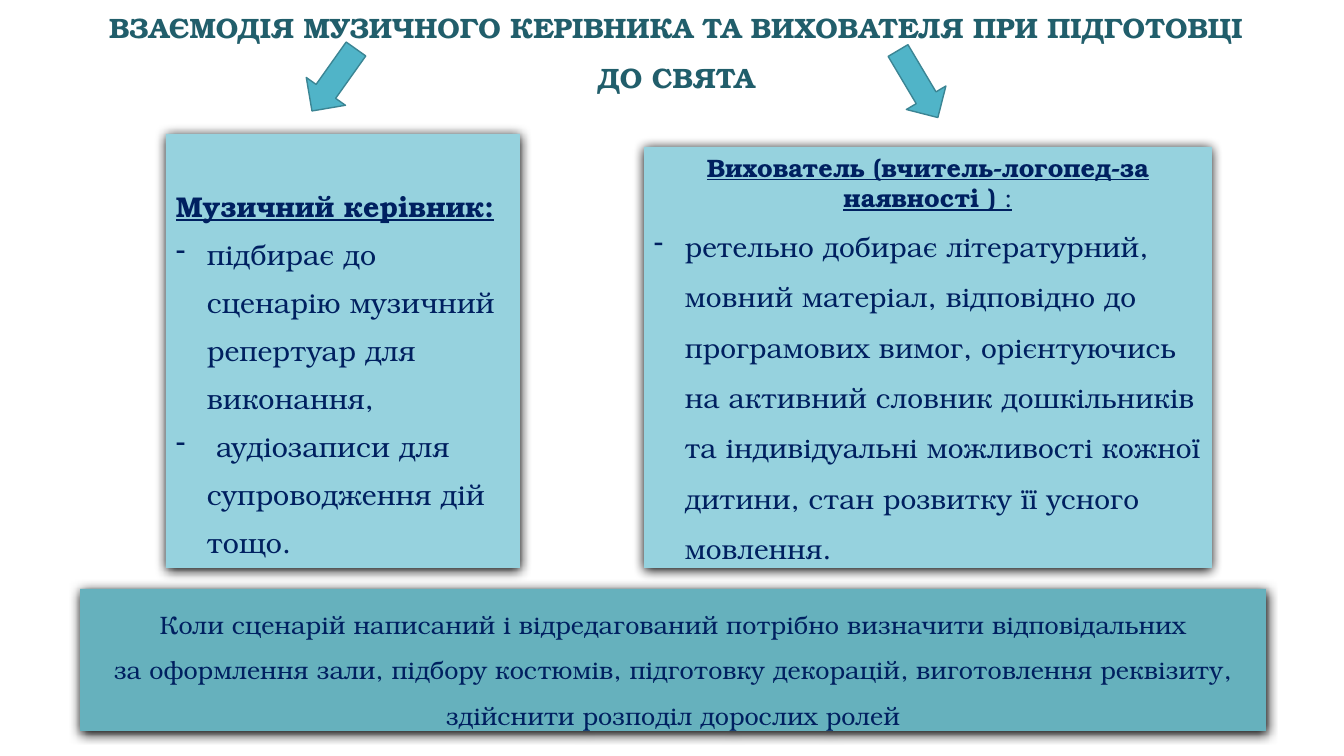
from lxml.etree import SubElement
from pptx import Presentation
from pptx.dml.color import RGBColor
from pptx.enum.shapes import MSO_SHAPE as Shape
from pptx.enum.text import MSO_ANCHOR as Anchor, PP_ALIGN as Align
from pptx.oxml.ns import qn
from pptx.util import Pt

TITLE_TEAL = RGBColor(0x21, 0x5E, 0x6B)
NAVY = RGBColor(0x00, 0x20, 0x60)
PALE_TEAL = RGBColor(0x96, 0xD2, 0xDE)
DEEP_TEAL = RGBColor(0x66, 0xB1, 0xBD)
ARROW_TEAL = RGBColor(0x50, 0xB4, 0xC8)
ARROW_EDGE = RGBColor(0x3B, 0x85, 0x94)
FONT = "TeX Gyre Bonum"
PX = 914400 / 100.8
INDENT = 31

# Text styles
HEADING = {"bold": True, "underline": True}
UNDERLINED = {"underline": True}
PLAIN = {}

# Content: a paragraph is (runs, size, line spacing, alignment, bulleted)
TITLE = [([("ВЗАЄМОДІЯ МУЗИЧНОГО КЕРІВНИКА ТА ВИХОВАТЕЛЯ ПРИ ПІДГОТОВЦІ ДО СВЯТА",
            {"bold": True, "color": TITLE_TEAL})], 20, 1.5, Align.CENTER, False)]
MUSIC_LEADER = [
    ([("Музичний керівник:", HEADING)], 20.4, 1.4, Align.LEFT, False),
    ([("підбирає до сценарію музичний репертуар для виконання,", PLAIN)],
     20.4, 1.4, Align.LEFT, True),
    ([(" аудіозаписи для супроводження дій тощо.", PLAIN)],
     20.4, 1.4, Align.LEFT, True),
]
EDUCATOR = [
    ([("Вихователь (вчитель-логопед-за наявності ) ", HEADING), (":", UNDERLINED)],
     18, 1.0, Align.CENTER, False),
    ([("ретельно добирає літературний, мовний матеріал, відповідно до програмових "
       "вимог, орієнтуючись на активний словник дошкільників та індивідуальні "
       "можливості кожної дитини, стан розвитку її усного мовлення.", PLAIN)],
     20, 1.5, Align.LEFT, True),
]
SUMMARY = [
    ([(line, PLAIN)], 18, 1.5, Align.CENTER, False) for line in (
        "Коли сценарій написаний і відредагований потрібно визначити відповідальних",
        "за оформлення зали, підбору костюмів, підготовку декорацій, виготовлення "
        "реквізиту, здійснити розподіл дорослих ролей")
]

# Layout in px: left, top, width, height
TITLE_AREA = (87, 10, 1178, 68)
PANELS = [  # area, fill, top margin, paragraphs
    ((166, 134, 354, 434), PALE_TEAL, 41, MUSIC_LEADER),
    ((644, 147, 568, 421), PALE_TEAL, 5, EDUCATOR),
    ((80, 589, 1186, 142), DEEP_TEAL, 5, SUMMARY),
]
ARROWS = [((310, 42, 48, 76), 35.4), ((895, 45, 46, 78), 329.3)]


def emu(*lengths):
    return [round(length * PX) for length in lengths]


def write(frame, paragraphs):
    frame.word_wrap = True
    for number, (runs, size, spacing, alignment, bulleted) in enumerate(paragraphs):
        paragraph = frame.add_paragraph() if number else frame.paragraphs[0]
        paragraph.alignment = alignment
        paragraph.line_spacing = spacing
        if bulleted:
            properties = paragraph._p.get_or_add_pPr()
            indent, = emu(INDENT)
            properties.set("marL", str(indent))
            properties.set("indent", str(-indent))
            SubElement(properties, qn("a:buChar"), char="-")
        for text, style in runs:
            run = paragraph.add_run()
            run.text = text
            look = {"name": FONT, "size": Pt(size), "bold": False,
                    "underline": False, "color": NAVY} | style
            run.font.color.rgb = look.pop("color")
            for attribute, value in look.items():
                setattr(run.font, attribute, value)


def add_filled(slide, kind, area, fill):
    shape = slide.shapes.add_shape(kind, *emu(*area))
    shape.shadow.inherit = False
    shape.fill.solid()
    shape.fill.fore_color.rgb = fill
    return shape


def cast_shadow(shape):
    effects = shape._element.spPr.find(qn("a:effectLst"))
    shadow = SubElement(effects, qn("a:outerShdw"), blurRad=str(Pt(8.5)),
                        dist=str(Pt(1)), dir="5400000", rotWithShape="0")
    SubElement(shadow, qn("a:srgbClr"), val="000000")


def main():
    deck = Presentation()
    deck.slide_width, deck.slide_height = emu(1344, 756)
    slide = deck.slides.add_slide(deck.slide_layouts[6])

    # Title
    title = slide.shapes.add_textbox(*emu(*TITLE_AREA)).text_frame
    title.vertical_anchor = Anchor.MIDDLE
    write(title, TITLE)

    # Text panels
    for area, fill, top_margin, paragraphs in PANELS:
        panel = add_filled(slide, Shape.RECTANGLE, area, fill)
        panel.line.fill.background()
        cast_shadow(panel)
        panel.text_frame.vertical_anchor = Anchor.TOP
        panel.text_frame.margin_top, = emu(top_margin)
        write(panel.text_frame, paragraphs)

    # Arrows from the title to the two roles
    for area, angle in ARROWS:
        arrow = add_filled(slide, Shape.DOWN_ARROW, area, ARROW_TEAL)
        arrow.line.color.rgb = ARROW_EDGE
        arrow.line.width = Pt(1)
        arrow.rotation = angle

    deck.save("out.pptx")


if __name__ == "__main__":
    main()
